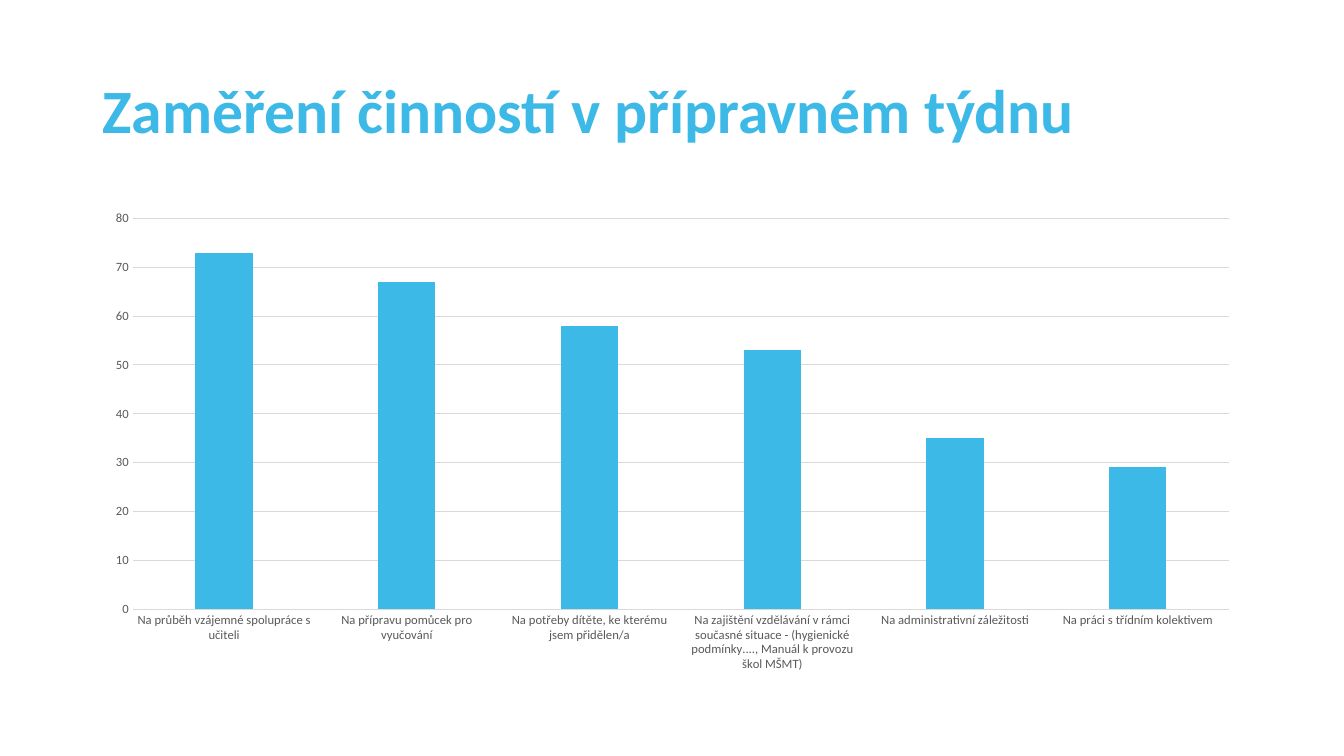
"""Builds a slide with a column chart of preparatory week activities."""
from pptx import Presentation
from pptx.chart.data import CategoryChartData
from pptx.dml.color import RGBColor
from pptx.enum.chart import XL_CHART_TYPE, XL_TICK_MARK
from pptx.enum.text import MSO_ANCHOR
from pptx.util import Inches, Pt

TITLE = "Zaměření činností v přípravném týdnu"
ACTIVITIES = [
    ("Na průběh vzájemné spolupráce s učiteli", 73),
    ("Na přípravu pomůcek pro vyučování", 67),
    ("Na potřeby dítěte, ke kterému jsem přidělen/a", 58),
    ("Na zajištění vzdělávání v rámci současné situace - (hygienické "
     "podmínky...., Manuál k provozu škol MŠMT)", 53),
    ("Na administrativní záležitosti", 35),
    ("Na práci s třídním kolektivem", 29),
]
FONT = "Calibri"
BLUE = RGBColor(0x3C, 0xB9, 0xE6)
GREY = RGBColor(0x59, 0x59, 0x59)
LIGHT_GREY = RGBColor(0xD9, 0xD9, 0xD9)
LEFT, WIDTH = Inches(0.92), Inches(11.5)


def set_font(font, size, color):
    font.name = FONT
    font.size = Pt(size)
    font.color.rgb = color


def set_line(line):
    line.color.rgb = LIGHT_GREY
    line.width = Pt(0.75)


def add_title(s):
    tf = s.shapes.add_textbox(LEFT, Inches(0.4), WIDTH, Inches(1.45)).text_frame
    tf.word_wrap = True
    tf.vertical_anchor = MSO_ANCHOR.MIDDLE
    tf.text = TITLE
    p = tf.paragraphs[0]
    p.line_spacing = 0.9
    r = p.runs[0]
    set_font(r.font, 44, BLUE)
    r.font.bold = True


def add_activity_chart(s):
    data = CategoryChartData()
    data.categories = [name for name, _ in ACTIVITIES]
    data.add_series("Series 1", [value for _, value in ACTIVITIES])
    chart = s.shapes.add_chart(XL_CHART_TYPE.COLUMN_CLUSTERED, LEFT, Inches(2),
                               WIDTH, Inches(4.76), data).chart
    chart.has_legend = False
    chart.has_title = False
    set_font(chart.font, 10, GREY)

    plot = chart.plots[0]
    plot.gap_width = 219
    plot.overlap = -27
    plot.vary_by_categories = False
    fill = plot.series[0].format.fill
    fill.solid()
    fill.fore_color.rgb = BLUE

    for axis in (chart.category_axis, chart.value_axis):
        axis.major_tick_mark = axis.minor_tick_mark = XL_TICK_MARK.NONE
        set_font(axis.tick_labels.font, 9, GREY)
    set_line(chart.category_axis.format.line)
    axis = chart.value_axis
    axis.minimum_scale, axis.maximum_scale, axis.major_unit = 0, 80, 10
    axis.format.line.fill.background()
    set_line(axis.major_gridlines.format.line)


def main():
    prs = Presentation()
    prs.slide_width, prs.slide_height = Inches(13.33), Inches(7.5)
    s = prs.slides.add_slide(prs.slide_layouts[6])
    add_title(s)
    add_activity_chart(s)
    prs.save("out.pptx")


if __name__ == "__main__":
    main()
